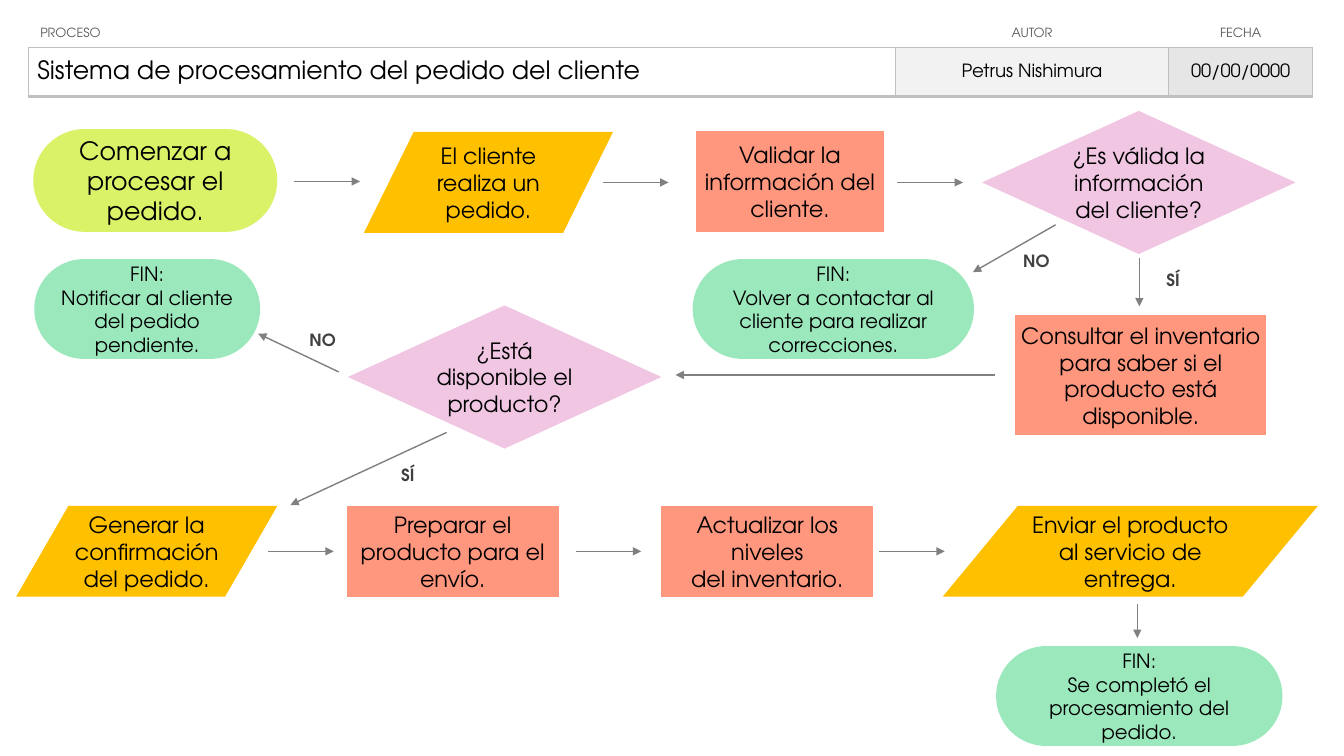
from dataclasses import dataclass
from typing import NamedTuple

from lxml import etree
from pptx import Presentation
from pptx.dml.color import RGBColor
from pptx.enum.shapes import MSO_CONNECTOR, MSO_SHAPE
from pptx.enum.text import MSO_ANCHOR, PP_ALIGN
from pptx.oxml.ns import qn
from pptx.util import Emu, Pt

PX = 9144  # 100 px to the inch
PILL = MSO_SHAPE.ROUNDED_RECTANGLE
DATA = MSO_SHAPE.FLOWCHART_DATA
TASK = MSO_SHAPE.FLOWCHART_PROCESS
TEST = MSO_SHAPE.FLOWCHART_DECISION
LINE = MSO_CONNECTOR.STRAIGHT
MID = MSO_ANCHOR.MIDDLE
LEFT, CENTER = PP_ALIGN.LEFT, PP_ALIGN.CENTER


@dataclass(frozen=True)
class Theme:
    font: str = "TeX Gyre Adventor"
    ink: str = "000000"
    head: str = "595959"
    label: str = "404040"
    arrow: str = "808080"
    rule: str = "BFBFBF"
    white: str = "FFFFFF"
    pale: str = "F2F2F2"
    gray: str = "E6E6E6"
    lime: str = "DAF267"
    green: str = "9CE8BD"
    gold: str = "FFC000"
    coral: str = "FF967E"
    pink: str = "F1C6E3"
    tiny: int = 9
    small: int = 12
    meta: int = 13
    end: int = 14
    body: int = 16
    title: int = 18


T = Theme()


class Style(NamedTuple):
    kind: int
    fill: str
    size: int
    pad: int


START = Style(PILL, T.lime, T.title, 2)
END = Style(PILL, T.green, T.end, 2)
INPUT = Style(DATA, T.gold, T.body, 0)
STEP = Style(TASK, T.coral, T.body, 2)
ASK = Style(TEST, T.pink, T.body, 0)


class Node(NamedTuple):
    style: Style
    x: int
    y: int
    w: int
    h: int
    text: str


class Arrow(NamedTuple):
    x1: int
    y1: int
    x2: int
    y2: int


class Label(NamedTuple):
    x: int
    y: int
    w: int
    text: str


class Field(NamedTuple):
    head: str
    text: str
    width: int
    fill: str
    size: int
    align: int


NODES = [
    Node(START, 33, 128, 242, 102, "Comenzar a procesar el pedido."),
    Node(INPUT, 361, 131, 247, 100, "El cliente realiza un pedido."),
    Node(STEP, 690, 130, 187, 100, "Validar la información del cliente."),
    Node(ASK, 974, 110, 311, 142, "¿Es válida la información del cliente?"),
    Node(END, 34, 257, 224, 99,
         "FIN:\nNotificar al cliente\ndel pedido pendiente."),
    Node(END, 687, 257, 279, 99,
         "FIN:\nVolver a contactar al cliente para realizar correcciones."),
    Node(STEP, 1007, 313, 249, 119,
         "Consultar el inventario para saber si el producto está disponible."),
    Node(ASK, 345, 303, 311, 142, "¿Está disponible el producto?"),
    Node(INPUT, 16, 502, 259, 90, "Generar la confirmación del pedido."),
    Node(STEP, 344, 502, 210, 90, "Preparar el producto para el envío."),
    Node(STEP, 656, 502, 210, 90, "Actualizar los niveles\ndel inventario."),
    Node(INPUT, 935, 502, 372, 90,
         "Enviar el producto\nal servicio de entrega."),
    Node(END, 988, 641, 284, 99,
         "FIN:\nSe completó el procesamiento del pedido."),
]

# Short steps to the right share one length
STARTS = [(292, 180), (598, 181), (890, 181), (266, 547), (571, 547), (872, 547)]
ARROWS = [Arrow(x, y, x + 65, y) for x, y in STARTS] + [
    Arrow(1130, 256, 1130, 304),
    Arrow(1047, 223, 965, 270),
    Arrow(987, 372, 670, 372),
    Arrow(336, 369, 256, 331),
    Arrow(443, 429, 288, 501),
    Arrow(1128, 599, 1128, 633),
]

LABELS = [
    Label(987, 237, 82, "NO"),
    Label(1135, 256, 57, "SÍ"),
    Label(279, 316, 82, "NO"),
    Label(376, 450, 57, "SÍ"),
]

FIELDS = [
    Field("PROCESO", "Sistema de procesamiento del pedido del cliente",
          860, T.white, T.title, LEFT),
    Field("AUTOR", "Petrus Nishimura", 271, T.pale, T.meta, CENTER),
    Field("FECHA", "00/00/0000", 143, T.gray, T.meta, CENTER),
]


def px(n: int) -> Emu:
    return Emu(n * PX)


def rgb(code: str) -> RGBColor:
    return RGBColor.from_string(code)


def write(frame, text: str, size: int, color: str,
          align: int = CENTER, bold: bool = False) -> None:
    frame.text = text
    for para in frame.paragraphs:
        para.alignment = align
        font = para.font
        font.name, font.size, font.bold = T.font, Pt(size), bold
        font.color.rgb = rgb(color)


def inset(frame, pad: int) -> None:
    frame.word_wrap = True
    frame.vertical_anchor = MID
    frame.margin_left = frame.margin_right = px(pad)
    frame.margin_top = frame.margin_bottom = px(pad)


def add_node(shapes, node: Node) -> None:
    style = node.style
    box = shapes.add_shape(style.kind, *map(px, node[1:5]))
    box.shadow.inherit = False
    box.fill.solid()
    box.fill.fore_color.rgb = rgb(style.fill)
    box.line.fill.background()
    if style.kind == PILL:
        box.adjustments[0] = 0.5
    inset(box.text_frame, style.pad)
    write(box.text_frame, node.text, style.size, T.ink)


def add_arrow(shapes, arrow: Arrow) -> None:
    line = shapes.add_connector(LINE, *map(px, arrow))
    line.line.color.rgb = rgb(T.arrow)
    line.line.width = Pt(1)
    etree.SubElement(line.line._get_or_add_ln(), qn("a:tailEnd"), type="triangle")
    etree.SubElement(line._element.spPr, qn("a:effectLst"))


def add_label(shapes, label: Label) -> None:
    box = shapes.add_textbox(px(label.x), px(label.y), px(label.w), px(43))
    inset(box.text_frame, 2)
    write(box.text_frame, label.text, T.small, T.label, bold=True)


def set_edges(cell, widths: dict[str, float]) -> None:
    props = cell._tc.get_or_add_tcPr()
    for side, width in widths.items():
        edge = etree.SubElement(props, qn(f"a:ln{side}"), w=str(Pt(width)))
        if width:
            fill = etree.SubElement(edge, qn("a:solidFill"))
            etree.SubElement(fill, qn("a:srgbClr"), val=T.rule)
        else:
            etree.SubElement(edge, qn("a:noFill"))


def set_cell(cell, text: str, size: int, color: str, align: int, left: int) -> None:
    cell.vertical_anchor = MID
    cell.margin_left, cell.margin_right = px(left), px(1)
    cell.margin_top, cell.margin_bottom = px(1), 0
    write(cell.text_frame, text, size, color, align)


def add_header(shapes) -> None:
    width = sum(field.width for field in FIELDS)
    table = shapes.add_table(2, len(FIELDS), px(28), px(19), px(width), px(77)).table
    table.first_row = table.horz_banding = False
    table.rows[0].height, table.rows[1].height = px(28), px(49)
    for col, field in enumerate(FIELDS):
        table.columns[col].width = px(field.width)
        flush = field.align == LEFT
        head, body = table.cell(0, col), table.cell(1, col)
        set_cell(head, field.head, T.tiny, T.head, field.align, 12 if flush else 1)
        set_edges(head, {"L": 0, "R": 0, "T": 0, "B": 1})
        head.fill.background()
        set_cell(body, field.text, field.size, T.ink, field.align, 9 if flush else 1)
        set_edges(body, {"L": 1, "R": 1, "T": 1, "B": 2.25})
        body.fill.solid()
        body.fill.fore_color.rgb = rgb(field.fill)


def main() -> None:
    deck = Presentation()
    deck.slide_width, deck.slide_height = px(1333), px(750)
    shapes = deck.slides.add_slide(deck.slide_layouts[6]).shapes
    # Header table
    add_header(shapes)
    # Flowchart
    for node in NODES:
        add_node(shapes, node)
    for arrow in ARROWS:
        add_arrow(shapes, arrow)
    for label in LABELS:
        add_label(shapes, label)
    deck.save("out.pptx")


if __name__ == "__main__":
    main()
